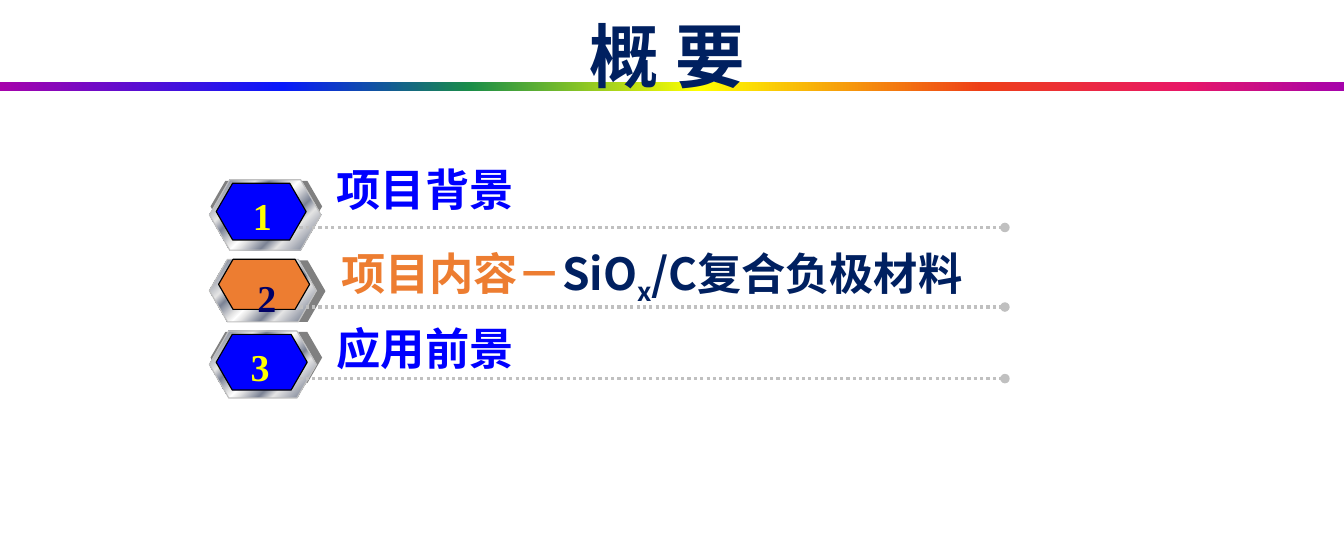
from dataclasses import dataclass

from lxml.etree import SubElement
from pptx import Presentation
from pptx.dml.color import RGBColor
from pptx.enum.dml import MSO_LINE
from pptx.enum.shapes import MSO_CONNECTOR, MSO_SHAPE
from pptx.enum.text import MSO_ANCHOR, PP_ALIGN
from pptx.oxml.ns import qn
from pptx.util import Pt


@dataclass(frozen=True)
class Theme:
    navy: str = "002060"
    blue: str = "0000FF"
    orange: str = "ED7D31"
    yellow: str = "FFFF00"
    indigo: str = "000066"
    black: str = "000000"
    shade: str = "808080"
    silver: str = "C0C0C0"
    title_size: int = 44
    label_size: int = 28
    number_size: int = 24
    title_font: str = "Calibri"
    label_font: str = "Noto Sans CJK SC"
    number_font: str = "Times New Roman"
    rainbow: tuple = ((0, "A603AB"), (21, "0819FB"), (35, "1A8D48"), (52, "FFFF00"),
                      (73, "EE3F17"), (88, "E81766"), (100, "A603AB"))
    chrome: tuple = ((0, "E6E6E6"), (8, "7D8496"), (26, "E6E6E6"), (34, "7D8496"),
                     (46, "E6E6E6"), (50, "FFFFFF"), (54, "E6E6E6"), (66, "7D8496"),
                     (74, "E6E6E6"), (92, "7D8496"), (100, "E6E6E6"))


THEME = Theme()


@dataclass(frozen=True)
class AgendaItem:
    """One row; every box is left, top, width, height from the row's corner."""
    top: float
    back: tuple
    rim: tuple
    face: tuple
    number_box: tuple
    label_box: tuple
    runs: tuple
    face_color: str = THEME.blue
    number_color: str = THEME.yellow
    wrap_number: bool = False


ITEMS = (
    AgendaItem(113.8, (0.7, 0.7, 70.6, 32.4), (0, 0, 70.6, 44.6), (4.3, 2.2, 56.9, 36),
               (20.2, 4.3, 26.6, 36.7), (73.4, -10.8, 438.5, 41),
               (("项目背景", THEME.blue, 0),)),
    AgendaItem(164.2, (0.7, 0.7, 72.7, 38.9), (0, 0, 67.7, 39.6), (5.8, 0, 57.6, 31.7),
               (23, 5.8, 26.6, 36.7), (76.3, -11.5, 518.4, 74.9),
               (("项目内容－", THEME.orange, 0), ("SiO", THEME.navy, 0),
                ("x", THEME.navy, -25), ("/C复合负极材料", THEME.navy, 0)),
               THEME.orange, THEME.indigo, True),
    AgendaItem(209.5, (0.7, 0.7, 70.6, 32.4), (0, 0, 67.7, 42.5), (4.3, 2.2, 57.6, 35.3),
               (18.7, 4.3, 26.6, 36.7), (73.4, -5.8, 438.5, 41),
               (("应用前景", THEME.blue, 0),)),
)


def offset(box, left, top):
    return box[0] + left, box[1] + top, box[2], box[3]


def add_text(slide, box, runs, *, size, font, align=PP_ALIGN.LEFT, wrap=True, spacing=1.0):
    """Add one bold paragraph; runs hold text, colour and baseline percent."""
    frame = slide.shapes.add_textbox(*map(Pt, box)).text_frame
    frame.word_wrap = wrap
    frame.vertical_anchor = MSO_ANCHOR.TOP
    paragraph = frame.paragraphs[0]
    paragraph.alignment = align
    paragraph.line_spacing = spacing
    for text, color, baseline in runs:
        run = paragraph.add_run()
        run.text = text
        run.font.size = Pt(size)
        run.font.bold = True
        run.font.name = font
        run.font.color.rgb = RGBColor.from_string(color)
        properties = run.font._element
        SubElement(properties, qn("a:ea")).set("typeface", THEME.label_font)
        if baseline:
            properties.set("baseline", str(baseline * 1000))


def add_block(slide, kind, box, fill, *, angle=0, line=None):
    """Add a shape; fill is a colour or a tuple of gradient stops."""
    shape = slide.shapes.add_shape(kind, *map(Pt, box))
    shape.shadow.inherit = False
    if isinstance(fill, str):
        shape.fill.solid()
        shape.fill.fore_color.rgb = RGBColor.from_string(fill)
    else:
        shape.fill.gradient()
        shape.fill.gradient_angle = -angle % 360
        stops = shape._element.spPr.find(qn("a:gradFill")).find(qn("a:gsLst"))
        for stop in list(stops):
            stops.remove(stop)
        for position, color in fill:
            stop = SubElement(stops, qn("a:gs"), pos=str(position * 1000))
            SubElement(stop, qn("a:srgbClr"), val=color)
    if line:
        shape.line.color.rgb = RGBColor.from_string(line)
        shape.line.width = Pt(0.75)
    else:
        shape.line.fill.background()
    return shape


def add_hexagon(slide, box, fill, **style):
    add_block(slide, MSO_SHAPE.HEXAGON, box, fill, **style).adjustments[0] = 0.289


def add_dotted_rule(slide, left, top, width):
    rule = slide.shapes.add_connector(
        MSO_CONNECTOR.STRAIGHT, Pt(left), Pt(top), Pt(left + width), Pt(top))
    rule.line.color.rgb = RGBColor.from_string(THEME.silver)
    rule.line.width = Pt(2)
    rule.line.dash_style = MSO_LINE.ROUND_DOT
    SubElement(rule.line._get_or_add_ln(), qn("a:tailEnd"), type="oval")
    SubElement(rule._element.spPr, qn("a:effectLst"))


def add_header(slide, left, top, width):
    add_block(slide, MSO_SHAPE.RECTANGLE, (left, top + 51.8, width, 5.8), THEME.rainbow)
    add_text(slide, (left + 39.6, top + 10.8, 765.4, 37.4), [("概 要", THEME.navy, 0)],
             size=THEME.title_size, font=THEME.title_font,
             align=PP_ALIGN.CENTER, spacing=0.9)


def add_agenda_row(slide, left, number, item):
    def place(box):
        return offset(box, left, item.top)

    add_hexagon(slide, place(item.back), THEME.shade)
    add_hexagon(slide, place(item.rim), THEME.chrome, angle=45, line=THEME.silver)
    add_hexagon(slide, place(item.face), item.face_color, line=THEME.black)
    add_dotted_rule(slide, left + 56.9, item.top + 30.2, 446.4)
    add_text(slide, place(item.label_box), item.runs,
             size=THEME.label_size, font=THEME.label_font, spacing=0.9)
    add_text(slide, place(item.number_box), [(str(number), item.number_color, 0)],
             size=THEME.number_size, font=THEME.number_font,
             align=PP_ALIGN.CENTER, wrap=item.wrap_number)


def main():
    presentation = Presentation()
    presentation.slide_width = Pt(850.3)
    presentation.slide_height = Pt(340.6)
    slide = presentation.slides.add_slide(presentation.slide_layouts[6])
    add_header(slide, 0, 0, 850.3)
    for number, item in enumerate(ITEMS, 1):
        add_agenda_row(slide, 132.5, number, item)
    presentation.save("out.pptx")


if __name__ == "__main__":
    main()
